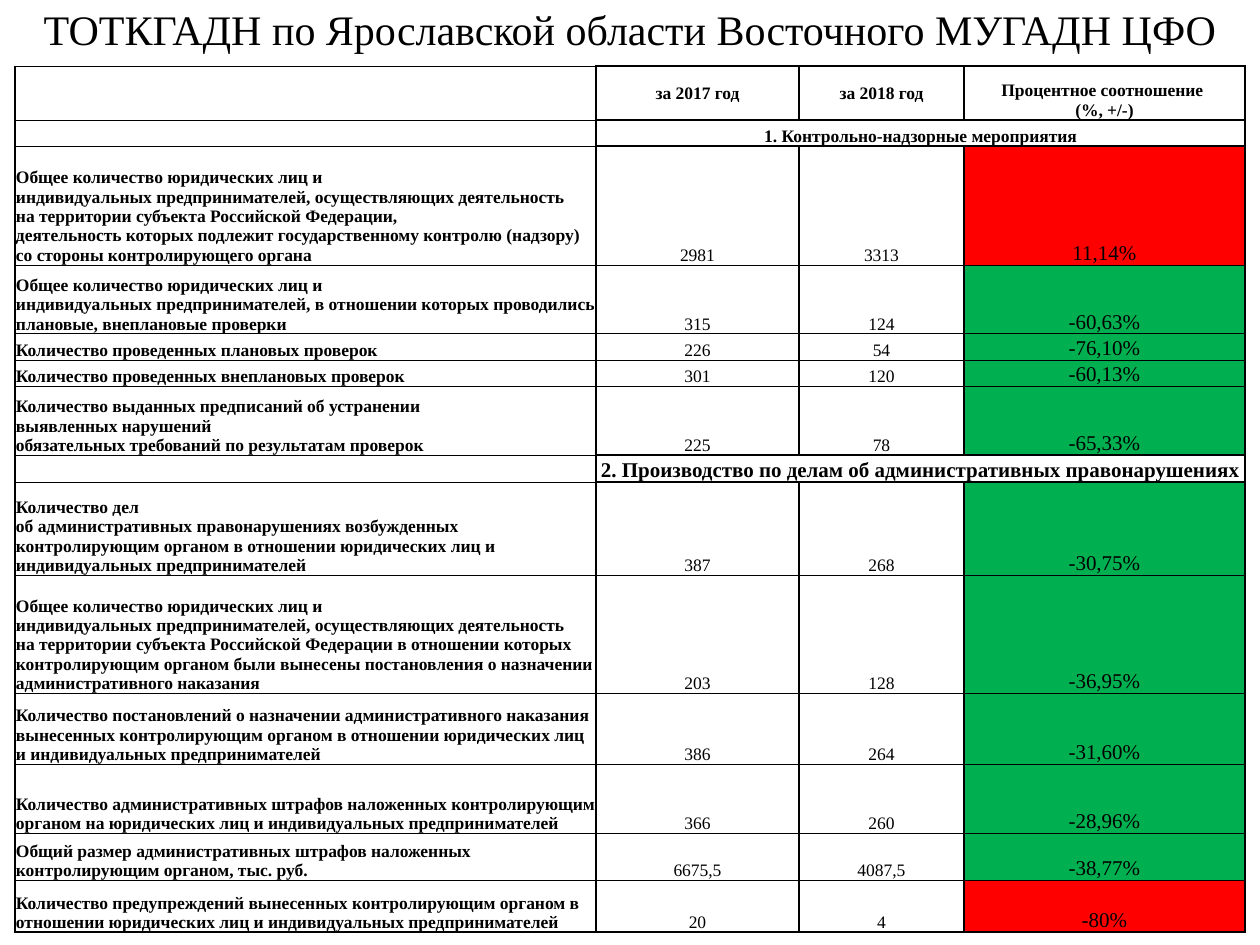
from lxml.etree import SubElement
from pptx import Presentation
from pptx.dml.color import RGBColor
from pptx.enum.text import MSO_ANCHOR, PP_ALIGN
from pptx.oxml.ns import qn
from pptx.util import Emu, Pt

FONT = "Times New Roman"
BLACK, WHITE, RED, GREEN = "000000", "FFFFFF", "FF0000", "00B050"
TITLE = "ТОТКГАДН по Ярославской области Восточного МУГАДН ЦФО"
COLS = [581, 203, 165, 281]
TALL = [54, 26, 119, 69, 24, 25, 69, 27, 93, 118, 71, 69, 47, 52]
HEADS = {1: 10, 7: 12}
THICK = {0, 1, 2, 7, 8}
ROWS = [
    ("", "за 2017 год", "за 2018 год", "Процентное соотношение \n(%, +/-)"),
    ("", "1. Контрольно-надзорные мероприятия"),
    ("Общее количество юридических лиц и \nиндивидуальных предпринимателей, осуществляющих деятельность\n"
     "на территории субъекта Российской Федерации,\nдеятельность которых подлежит государственному контролю "
     "(надзору) со стороны контролирующего органа", "2981", "3313", "11,14%"),
    ("Общее количество юридических лиц и\nиндивидуальных предпринимателей, в отношении которых "
     "проводились плановые, внеплановые проверки", "315", "124", "-60,63%"),
    ("Количество проведенных плановых проверок", "226", "54", "-76,10%"),
    ("Количество проведенных внеплановых проверок", "301", "120", "-60,13%"),
    ("Количество выданных предписаний об устранении \nвыявленных нарушений \n"
     "обязательных требований по результатам проверок", "225", "78", "-65,33%"),
    ("", "2. Производство по делам об административных правонарушениях"),
    ("Количество дел \nоб административных правонарушениях возбужденных контролирующим органом "
     "в отношении юридических лиц и индивидуальных предпринимателей", "387", "268", "-30,75%"),
    ("Общее количество юридических лиц и \nиндивидуальных предпринимателей, осуществляющих деятельность\n"
     "на территории субъекта Российской Федерации в отношении которых контролирующим органом "
     "были вынесены постановления о назначении административного наказания", "203", "128", "-36,95%"),
    ("Количество постановлений о назначении административного наказания вынесенных контролирующим "
     "органом в отношении юридических лиц и индивидуальных предпринимателей", "386", "264", "-31,60%"),
    ("Количество административных штрафов наложенных контролирующим органом "
     "на юридических лиц и индивидуальных предпринимателей", "366", "260", "-28,96%"),
    ("Общий размер административных штрафов наложенных контролирующим органом, тыс. руб.",
     "6675,5", "4087,5", "-38,77%"),
    ("Количество предупреждений вынесенных контролирующим органом "
     "в отношении юридических лиц и индивидуальных предпринимателей", "20", "4", "-80%"),
]


def px(n):
    return Emu(round(n * 914400 / 126))


def color(code):
    return RGBColor.from_string(code)


def write(para, text, size, bold=False, align=PP_ALIGN.CENTER):
    para.text = text
    para.alignment = align
    font = para.font
    font.name, font.size, font.bold = FONT, Pt(size), bold
    font.color.rgb = color(BLACK)
    if not text:
        SubElement(para._p, qn("a:endParaRPr"), sz=str(size * 100))


def border(cell, row, col):
    def weight(edge):
        return 1.5 if edge == len(ROWS) or col and edge in THICK else 0.5

    sides = {"L": 1.5, "R": 1.5, "T": weight(row), "B": weight(row + 1)}
    props = cell._tc.get_or_add_tcPr()
    for side, width in sides.items():
        line = SubElement(props, qn(f"a:ln{side}"), w=str(Pt(width)))
        fill = SubElement(line, qn("a:solidFill"))
        SubElement(fill, qn("a:srgbClr"), val=BLACK)


def shade(row, col):
    if col < 3 or row == 0 or row in HEADS:
        return None
    return RED if row in (2, len(ROWS) - 1) else GREEN


def style(cell, text, row, col):
    head = row == 0 or row in HEADS
    tone = shade(row, col)
    size = 12 if tone else HEADS.get(row, 10) if text else 10
    align = PP_ALIGN.CENTER if col else PP_ALIGN.LEFT
    cell.margin_left = cell.margin_right = cell.margin_top = px(1)
    cell.margin_bottom = 0
    middle = row == 0 and col < 3
    cell.vertical_anchor = MSO_ANCHOR.MIDDLE if middle else MSO_ANCHOR.BOTTOM
    write(cell.text_frame.paragraphs[0], text, size, head or col == 0, align)
    border(cell, row, col)
    if tone:
        cell.fill.solid()
        cell.fill.fore_color.rgb = color(tone)
    else:
        cell.fill.background()


def add_title(slide):
    frame = slide.shapes.add_textbox(px(15), 0, px(1230), px(58)).text_frame
    frame.word_wrap = True
    frame.vertical_anchor = MSO_ANCHOR.MIDDLE
    write(frame.paragraphs[0], TITLE, 24)


def add_grid(slide):
    table = slide.shapes.add_table(
        len(ROWS), len(COLS), px(15), px(66), px(sum(COLS)), px(sum(TALL))).table
    table.first_row = table.horz_banding = False
    for col, width in zip(table.columns, COLS):
        col.width = px(width)
    for row, height in zip(table.rows, TALL):
        row.height = px(height)
    for row in HEADS:
        table.cell(row, 1).merge(table.cell(row, 3))
    for row, texts in enumerate(ROWS):
        for col, text in enumerate(texts):
            style(table.cell(row, col), text, row, col)


def main():
    deck = Presentation()
    deck.slide_width, deck.slide_height = px(1260), px(945)
    slide = deck.slides.add_slide(deck.slide_layouts[6])
    slide.background.fill.solid()
    slide.background.fill.fore_color.rgb = color(WHITE)
    add_title(slide)
    add_grid(slide)
    deck.save("out.pptx")


if __name__ == "__main__":
    main()
